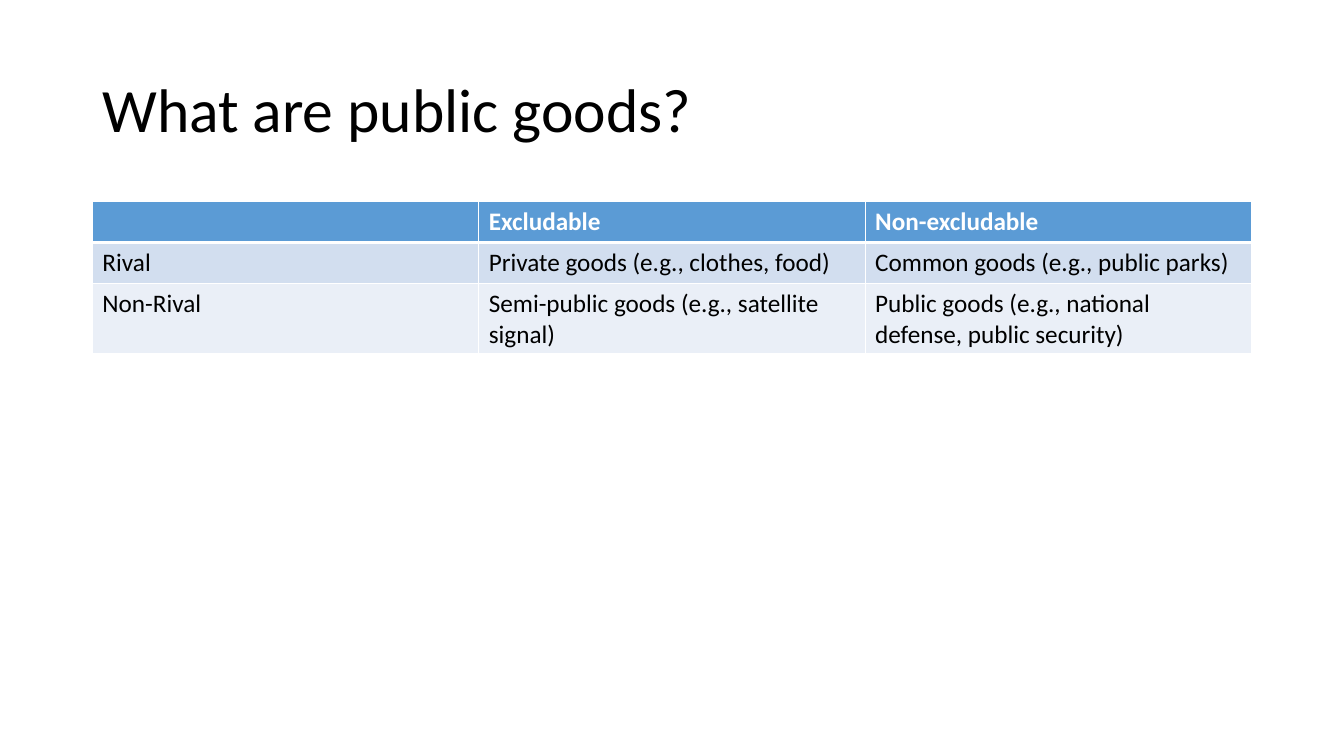
from pptx import Presentation
from pptx.dml.color import RGBColor as RGB
from pptx.enum.text import MSO_ANCHOR as Anchor
from pptx.oxml.ns import qn
from pptx.util import Pt
from lxml.etree import SubElement as Sub

PX = 9525
WHITE, BLACK = "FFFFFF", "000000"
ROWS = [
    ("", "Excludable", "Non-excludable"),
    ("Rival", "Private goods (e.g., clothes, food)",
     "Common goods (e.g., public parks)"),
    ("Non-Rival", "Semi-public goods (e.g., satellite signal)",
     "Public goods (e.g., national defense, public security)"),
]
FILLS = ["5B9BD5", "D2DEEF", "EAEFF7"]


def tint(code):
    return RGB.from_string(code)


class Deck:
    """Draws styled elements on one slide, with lengths in px."""

    def __init__(self, wide, high, face):
        self.face = face
        self.prs = Presentation()
        self.prs.slide_width, self.prs.slide_height = wide * PX, high * PX
        self.slide = self.prs.slides.add_slide(self.prs.slide_layouts[6])

    def style(self, para, size, color, bold=False):
        font = para.font
        font.name, font.size, font.bold = self.face, Pt(size), bold
        font.color.rgb = tint(color)

    def title(self, text, box, size, color):
        frame = self.slide.shapes.add_textbox(*(n * PX for n in box)).text_frame
        frame.word_wrap = True
        frame.vertical_anchor = Anchor.MIDDLE
        para = frame.paragraphs[0]
        para.text, para.line_spacing = text, 0.9
        self.style(para, size, color)

    def edge(self, cell, side, width, color):
        props = cell._tc.get_or_add_tcPr()
        line = Sub(props, qn(f"a:ln{side}"), w=str(Pt(width)))
        Sub(Sub(line, qn("a:solidFill")), qn("a:srgbClr"), val=color)

    def table(self, rows, fills, box, size):
        shape = self.slide.shapes.add_table(
            len(rows), len(rows[0]), *(n * PX for n in box))
        for r, row in enumerate(rows):
            head = r == 0
            for c, text in enumerate(row):
                cell = shape.table.cell(r, c)
                cell.text = text
                self.style(cell.text_frame.paragraphs[0], size,
                           WHITE if head else BLACK, head)
                for side in "LRTB":
                    thick = (r, side) in ((0, "B"), (1, "T"))
                    self.edge(cell, side, 3 if thick else 1, WHITE)
                cell.fill.solid()
                cell.fill.fore_color.rgb = tint(fills[r])

    def save(self):
        self.prs.save("out.pptx")


def main():
    deck = Deck(1280, 720, "Calibri")
    deck.title("What are public goods?", (88, 38, 1104, 139), 44, BLACK)
    deck.table(ROWS, FILLS, (88, 192, 1104, 117), 18)
    deck.save()


if __name__ == "__main__":
    main()
